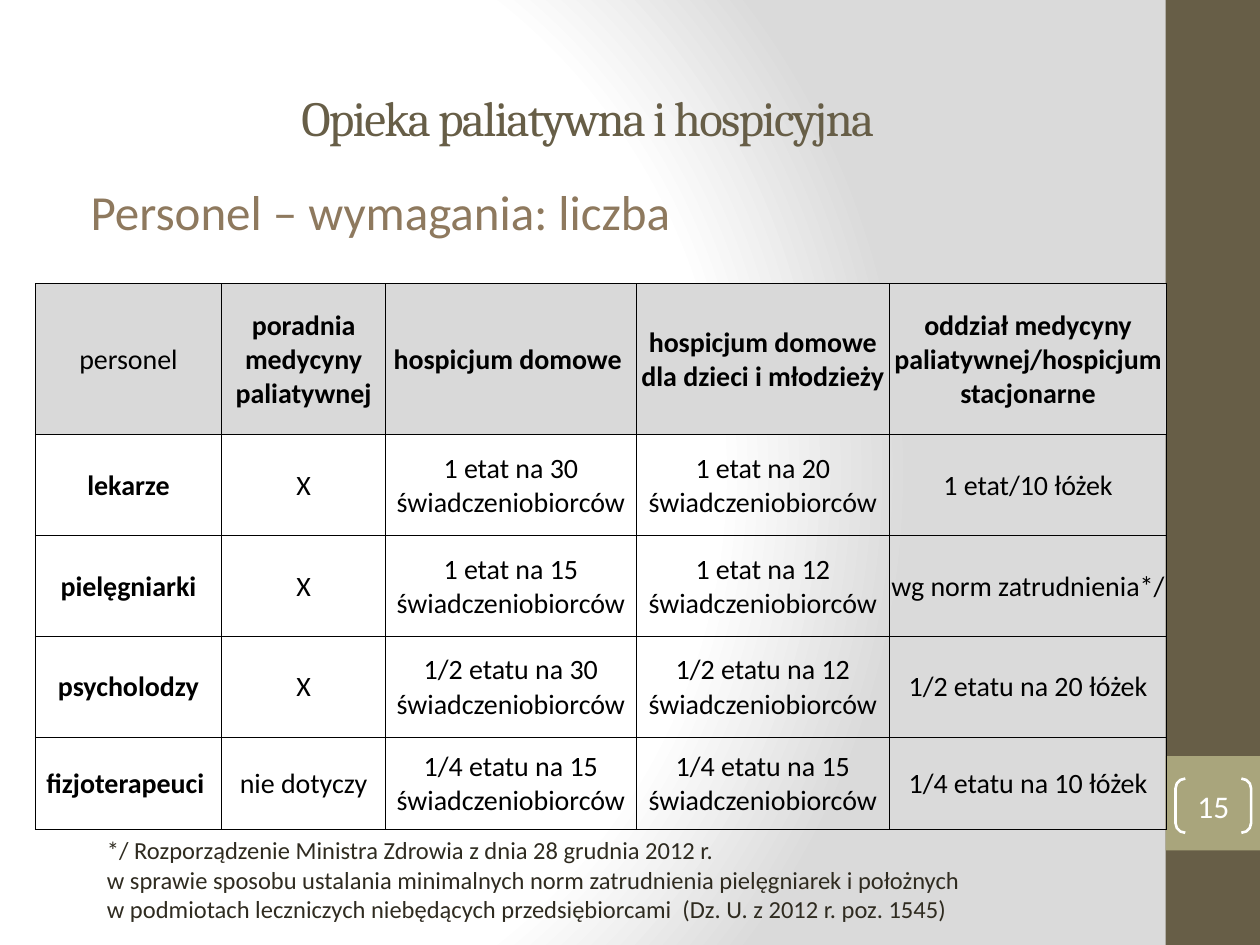
from pptx import Presentation
from pptx.dml.color import RGBColor as Rgb
from pptx.enum.shapes import MSO_SHAPE as Kind
from pptx.enum.text import MSO_ANCHOR as Anchor, PP_ALIGN as Align
from pptx.oxml import parse_xml
from pptx.oxml.ns import nsdecls
from pptx.util import Inches, Pt

HUES = {
    "olive": "675E47", "sage": "A9A57C", "tan": "8E795E", "dark": "2F2B20",
    "white": "FFFFFF", "black": "000000", "head": "D9D9D9", "edge": "DADADA",
}

TITLE = "Opieka paliatywna i hospicyjna"
TOPIC = "Personel – wymagania: liczba"
NOTE = "\v".join([
    "*/ Rozporządzenie Ministra Zdrowia z dnia 28 grudnia 2012 r. ",
    "w sprawie sposobu ustalania minimalnych norm zatrudnienia pielęgniarek i położnych ",
    "w podmiotach leczniczych niebędących przedsiębiorcami  (Dz. U. z 2012 r. poz. 1545)",
])
PAGE = "15"
ROWS = [
    ["personel", "poradnia medycyny paliatywnej", "hospicjum domowe ",
     "hospicjum domowe dla dzieci i młodzieży",
     "oddział medycyny paliatywnej/hospicjum stacjonarne"],
    ["lekarze", "X", "1 etat na 30 świadczeniobiorców",
     "1 etat na 20 świadczeniobiorców", "1 etat/10 łóżek"],
    ["pielęgniarki", "X", "1 etat na 15 świadczeniobiorców",
     "1 etat na 12 świadczeniobiorców", "wg norm zatrudnienia*/"],
    ["psycholodzy", "X", "1/2 etatu na 30 świadczeniobiorców",
     "1/2 etatu na 12 świadczeniobiorców", "1/2 etatu na 20 łóżek"],
    ["fizjoterapeuci ", "nie dotyczy", "1/4 etatu na 15 świadczeniobiorców",
     "1/4 etatu na 15 świadczeniobiorców", "1/4 etatu na 10 łóżek"],
]
WIDE = [1.48, 1.3, 1.99, 2.01, 2.2]
TALL = [1.2, 0.8, 0.8, 0.8, 0.73]
BANDS = [("olive", 0, 7.5), ("sage", 6, 0.75)]
STOPS = [(0, "white"), (75, "white"), (100, "edge")]

TEXTS = [
    (TITLE, (0.5, 0.3, 8.33, 1.25),
     {"vertical_anchor": Anchor.MIDDLE}, Align.CENTER,
     {"size": Pt(28), "name": "Cambria"}, "olive"),
    (TOPIC, (0.5, 1.39, 8.52, 0.79),
     {"margin_left": Inches(0.22)}, Align.LEFT,
     {"size": Pt(28), "name": "Calibri"}, "tan"),
    (NOTE, (0.75, 6.58, 8.11, 0.81), {}, Align.LEFT,
     {"size": Pt(14), "name": "Calibri"}, "dark"),
]
CELL = {
    "vertical_anchor": Anchor.MIDDLE, "margin_left": Inches(0.01),
    "margin_right": Inches(0.01), "margin_top": Inches(0.01), "margin_bottom": 0,
}
BADGE = {
    "vertical_anchor": Anchor.MIDDLE, "margin_left": 0,
    "margin_right": 0, "margin_top": 0, "margin_bottom": 0,
}


def hue(name):
    return Rgb.from_string(HUES[name])


def apply(item, form):
    for key, value in form.items():
        setattr(item, key, value)


def write(frame, text, align, form, color):
    frame.text = text
    para = frame.paragraphs[0]
    para.alignment = align
    for run in para.runs:
        apply(run.font, form)
        run.font.color.rgb = hue(color)


def shape(slide, kind, box):
    item = slide.shapes.add_shape(kind, *map(Inches, box))
    item.shadow.inherit = False
    return item


def paint(slide):
    stops = "".join(
        f'<a:gs pos="{at * 1000}"><a:srgbClr val="{HUES[name]}"/></a:gs>'
        for at, name in STOPS)
    slide.element.cSld.insert(0, parse_xml(
        f'<p:bg {nsdecls("p", "a")}><p:bgPr><a:gradFill rotWithShape="1">'
        f'<a:gsLst>{stops}</a:gsLst><a:path path="circle">'
        '<a:fillToRect l="20000" t="50000" r="100000" b="50000"/></a:path>'
        '</a:gradFill><a:effectLst/></p:bgPr></p:bg>'))


def border(cell):
    props = cell._tc.get_or_add_tcPr()
    for spot, side in enumerate("LRTB"):
        props.insert(spot, parse_xml(
            f'<a:ln{side} {nsdecls("a")} w="{Pt(0.5)}"><a:solidFill>'
            f'<a:srgbClr val="{HUES["black"]}"/></a:solidFill></a:ln{side}>'))


def fill_table(slide):
    box = (0.28, 2.25, sum(WIDE), sum(TALL))
    table = slide.shapes.add_table(
        len(ROWS), len(WIDE), *map(Inches, box)).table
    table.horz_banding = False
    for col, size in zip(table.columns, WIDE):
        col.width = Inches(size)
    for row, size in zip(table.rows, TALL):
        row.height = Inches(size)
    for r, line in enumerate(ROWS):
        for c, text in enumerate(line):
            cell = table.cell(r, c)
            apply(cell, CELL)
            bold = (r == 0) != (c == 0)
            form = {"size": Pt(16), "name": "Calibri", "bold": bold}
            write(cell.text_frame, text, Align.CENTER, form, "black")
            if r == 0:
                cell.fill.solid()
                cell.fill.fore_color.rgb = hue("head")
            else:
                cell.fill.background()
            border(cell)


def main():
    deck = Presentation()
    deck.slide_width, deck.slide_height = Inches(10), Inches(7.5)
    slide = deck.slides.add_slide(deck.slide_layouts[6])
    paint(slide)

    for name, top, high in BANDS:
        band = shape(slide, Kind.RECTANGLE, (9.25, top, 0.75, high))
        band.fill.solid()
        band.fill.fore_color.rgb = hue(name)
        band.line.fill.background()

    for text, box, frame_form, align, form, color in TEXTS:
        frame = slide.shapes.add_textbox(*map(Inches, box)).text_frame
        frame.word_wrap = True
        apply(frame, frame_form)
        write(frame, text, align, form, color)
        if text == TITLE:
            for run in frame.paragraphs[0].runs:
                run.font._element.set("spc", "-100")

    badge = shape(slide, Kind.DOUBLE_BRACKET, (9.33, 6.18, 0.6, 0.43))
    badge.adjustments[0] = 0.18
    badge.fill.background()
    badge.line.color.rgb = hue("white")
    badge.line.width = Pt(1.5)
    apply(badge.text_frame, BADGE)
    write(badge.text_frame, PAGE, Align.CENTER,
          {"size": Pt(18), "name": "Calibri"}, "white")

    fill_table(slide)
    deck.save("out.pptx")


if __name__ == "__main__":
    main()
